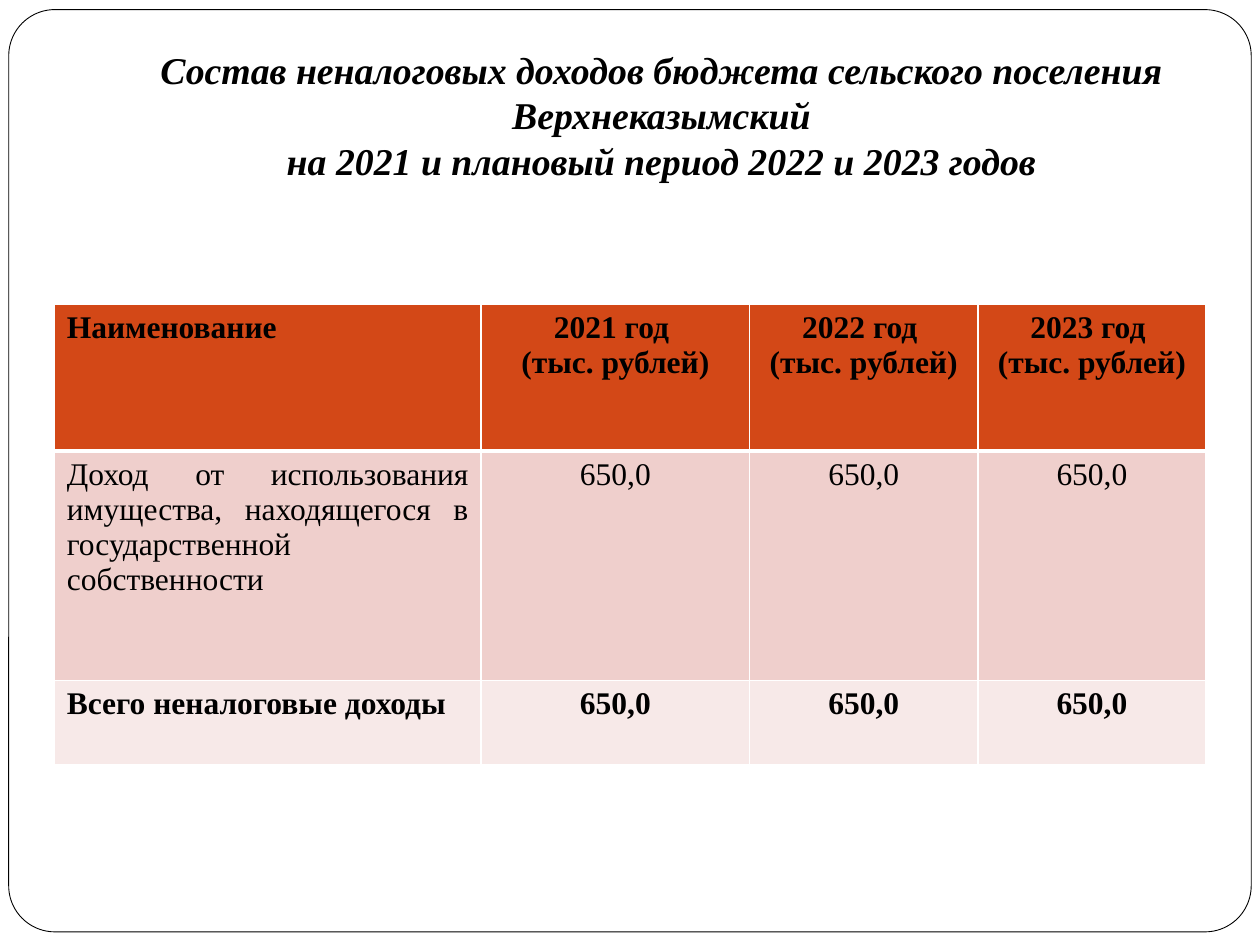
from lxml.etree import SubElement
from pptx import Presentation
from pptx.dml.color import RGBColor
from pptx.enum.shapes import MSO_SHAPE as Shape
from pptx.enum.text import MSO_ANCHOR as Anchor, PP_ALIGN as Align
from pptx.oxml.ns import qn
from pptx.util import Pt

WHITE = RGBColor(0xFF, 0xFF, 0xFF)
BLACK = RGBColor(0, 0, 0)
ORANGE = RGBColor(0xD3, 0x48, 0x17)
ROSE = RGBColor(0xEF, 0xCF, 0xCC)
PALE_ROSE = RGBColor(0xF7, 0xE9, 0xE8)
FONT = "Times New Roman"

TITLE = ("Состав неналоговых доходов бюджета сельского поселения "
         "Верхнеказымский\v на 2021 и плановый период 2022 и 2023 годов ")
COLUMN_WIDTHS = [244, 153.4, 130.4, 130.4]
AMOUNTS = ["650,0"] * 3
# Height, fill, bold, alignment of the first cell, cell texts
ROWS = [
    (84, ORANGE, True, Align.LEFT,
     ["Наименование"] + [f"{year} год \n(тыс. рублей)" for year in (2021, 2022, 2023)]),
    (131, ROSE, False, Align.JUSTIFY,
     ["Доход от использования имущества, находящегося в государственной собственности "]
     + AMOUNTS),
    (48, PALE_ROSE, True, Align.LEFT, ["Всего неналоговые доходы"] + AMOUNTS),
]


def format_text(frame, size, align, bold, italic=False):
    for para in frame.paragraphs:
        para.alignment = align
        for span in para.runs:
            font = span.font
            font.name, font.size = FONT, Pt(size)
            font.bold, font.italic = bold, italic
            font.color.rgb = BLACK


def add_frame(page, left, top, width, height):
    frame = page.shapes.add_shape(
        Shape.ROUNDED_RECTANGLE, Pt(left), Pt(top), Pt(width), Pt(height))
    frame.adjustments[0] = 0.05
    frame.shadow.inherit = False
    frame.fill.solid()
    frame.fill.fore_color.rgb = WHITE
    frame.line.color.rgb = BLACK
    frame.line.width = Pt(0.5)


def add_title(page, left, top, width, height):
    box = page.shapes.add_textbox(Pt(left), Pt(top), Pt(width), Pt(height))
    frame = box.text_frame
    frame.word_wrap = True
    frame.vertical_anchor = Anchor.BOTTOM
    frame.margin_bottom = Pt(7.2)
    frame.text = TITLE
    format_text(frame, 21.6, Align.CENTER, bold=True, italic=True)


def set_borders(cell, widths):
    """Draw white borders; widths are in the order left, right, top, bottom."""
    properties = cell._tc.get_or_add_tcPr()
    for position, (side, width) in enumerate(zip("LRTB", widths)):
        line = SubElement(properties, qn(f"a:ln{side}"), w=str(Pt(width)))
        fill = SubElement(line, qn("a:solidFill"))
        SubElement(fill, qn("a:srgbClr"), val=str(WHITE))
        properties.insert(position, line)


def add_income_table(page, left, top):
    width = sum(COLUMN_WIDTHS)
    height = sum(row[0] for row in ROWS)
    table = page.shapes.add_table(
        len(ROWS), len(COLUMN_WIDTHS), Pt(left), Pt(top), Pt(width), Pt(height)).table
    for column, column_width in zip(table.columns, COLUMN_WIDTHS):
        column.width = Pt(column_width)
    for r, (row_height, color, bold, first_align, texts) in enumerate(ROWS):
        table.rows[r].height = Pt(row_height)
        for c, text in enumerate(texts):
            cell = table.cell(r, c)
            cell.text_frame.text = text
            format_text(cell.text_frame, 18, Align.CENTER if c else first_align, bold)
            cell.fill.solid()
            cell.fill.fore_color.rgb = color
            set_borders(cell, (1, 1, 3 if r == 1 else 1, 3 if r == 0 else 1))


def main():
    deck = Presentation()
    deck.slide_width, deck.slide_height = Pt(720), Pt(540)
    page = deck.slides.add_slide(deck.slide_layouts[6])
    add_frame(page, 5, 5.5, 710, 527)
    add_title(page, 72, 21.6, 612, 90)
    add_income_table(page, 31, 173.8)
    deck.save("out.pptx")


if __name__ == "__main__":
    main()
